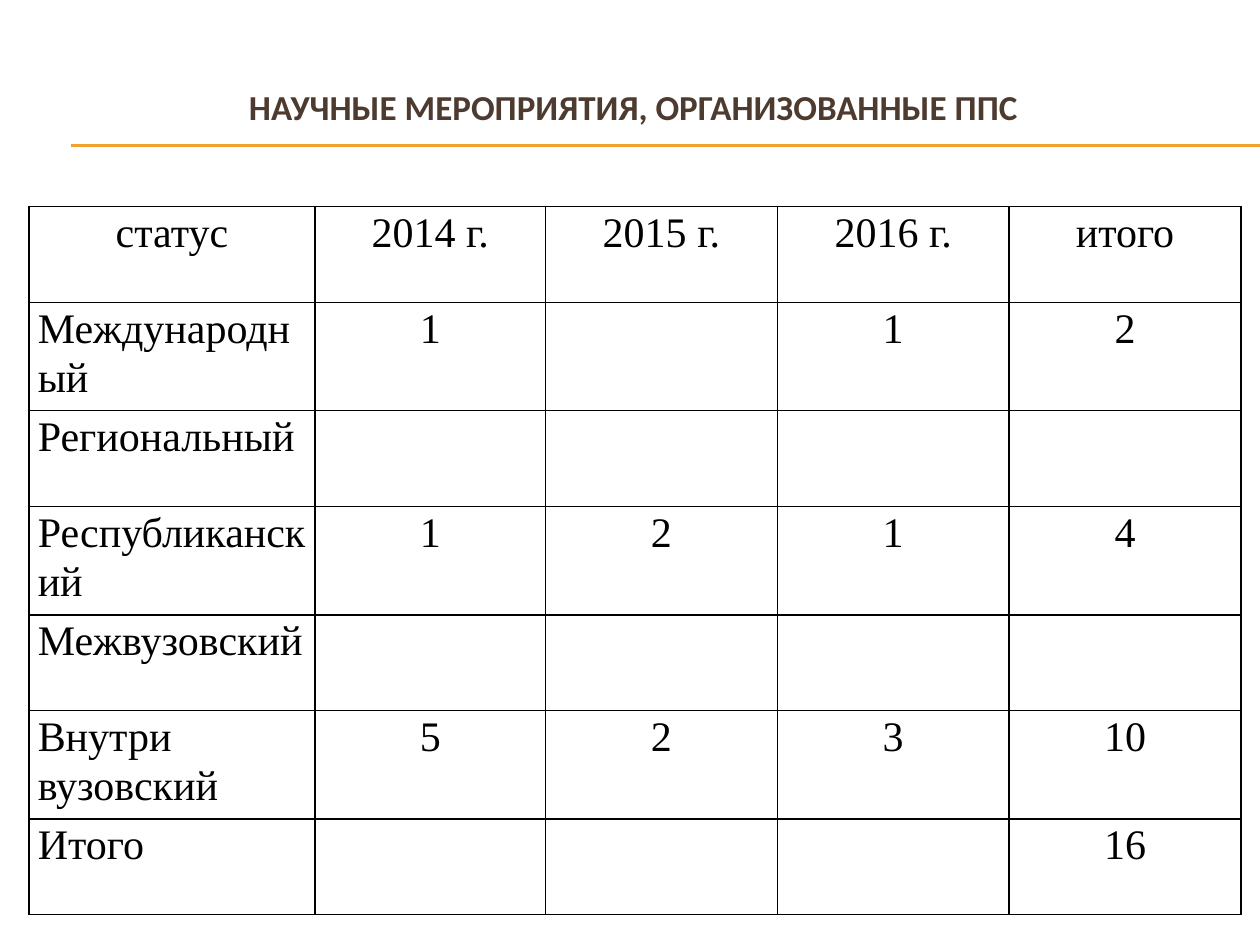
from lxml import etree
from pptx import Presentation
from pptx import util as u
from pptx.dml.color import RGBColor
from pptx.enum import shapes, text
from pptx.oxml import ns

COLORS = {"title": "4E3B30", "rule": "F0A22E", "ink": "000000", "paper": "FFFFFF"}
ROWS = [
    ["статус", "2014 г.", "2015 г.", "2016 г.", "итого"],
    ["Международный", "1", "", "1", "2"],
    ["Региональный", "", "", "", ""],
    ["Республиканский", "1", "2", "1", "4"],
    ["Межвузовский", "", "", "", ""],
    ["Внутри вузовский", "5", "2", "3", "10"],
    ["Итого ", "", "", "", "16"],
]
COLUMN_WIDTHS = [2.27, 1.83, 1.84, 1.84, 1.84]
ROW_HEIGHTS = [0.76, 0.86]


def color(name):
    return RGBColor.from_string(COLORS[name])


def write(para, words, font, size, ink, bold=False):
    span = para.add_run()
    span.text = words
    span.font.name = font
    span.font.size = u.Pt(size)
    span.font.bold = bold
    span.font.color.rgb = color(ink)


def add_heading(page, box, words):
    title = page.shapes.title
    title.left, title.top, title.width, title.height = map(u.Inches, box)
    frame = title.text_frame
    frame.word_wrap = True
    frame.vertical_anchor = text.MSO_ANCHOR.MIDDLE
    para = frame.paragraphs[0]
    para.alignment = text.PP_ALIGN.CENTER
    write(para, words, "Calibri", 20, "title", True)


def add_rules(page, left, right, heights):
    for height in heights:
        rule = page.shapes.add_connector(
            shapes.MSO_CONNECTOR.STRAIGHT,
            u.Inches(left), u.Inches(height), u.Inches(right), u.Inches(height))
        rule.line.color.rgb = color("rule")
        rule.line.width = u.Pt(0.75)
        etree.SubElement(rule._element.spPr, ns.qn("a:effectLst"))


def add_borders(cell):
    properties = cell._tc.get_or_add_tcPr()
    for side in ("lnL", "lnR", "lnT", "lnB"):
        border = etree.SubElement(properties, ns.qn(f"a:{side}"), w=str(u.Pt(1)))
        fill = etree.SubElement(border, ns.qn("a:solidFill"))
        etree.SubElement(fill, ns.qn("a:srgbClr"), val=COLORS["ink"])


def fill_cell(cell, words, alignment):
    add_borders(cell)
    cell.fill.background()
    cell.margin_left = cell.margin_right = u.Inches(0.07)
    cell.margin_top = cell.margin_bottom = 0
    if words:
        para = cell.text_frame.paragraphs[0]
        para.alignment = alignment
        para.line_spacing = 1.07
        write(para, words, "Times New Roman", 24, "ink")


def add_events_table(page, box):
    table = page.shapes.add_table(
        len(ROWS), len(COLUMN_WIDTHS), *map(u.Inches, box)).table
    table.first_row = table.horz_banding = False
    for column, width in zip(table.columns, COLUMN_WIDTHS):
        column.width = u.Inches(width)
    for r, values in enumerate(ROWS):
        table.rows[r].height = u.Inches(ROW_HEIGHTS[r % 2])
        for c, words in enumerate(values):
            is_label = r > 0 and c == 0
            alignment = text.PP_ALIGN.JUSTIFY if is_label else text.PP_ALIGN.CENTER
            fill_cell(table.cell(r, c), words, alignment)


def main():
    deck = Presentation()
    deck.slide_width, deck.slide_height = u.Inches(10), u.Inches(7.5)
    page = deck.slides.add_slide(deck.slide_layouts[5])
    page.background.fill.solid()
    page.background.fill.fore_color.rgb = color("paper")
    add_rules(page, 0.56, 10, (1.15, 1.16))
    add_heading(page, (0.62, 0.29, 8.88, 1.11), "НАУЧНЫЕ МЕРОПРИЯТИЯ, ОРГАНИЗОВАННЫЕ ППС ")
    add_events_table(page, (0.23, 1.64, 9.61, 5.61))
    deck.save("out.pptx")


if __name__ == "__main__":
    main()
